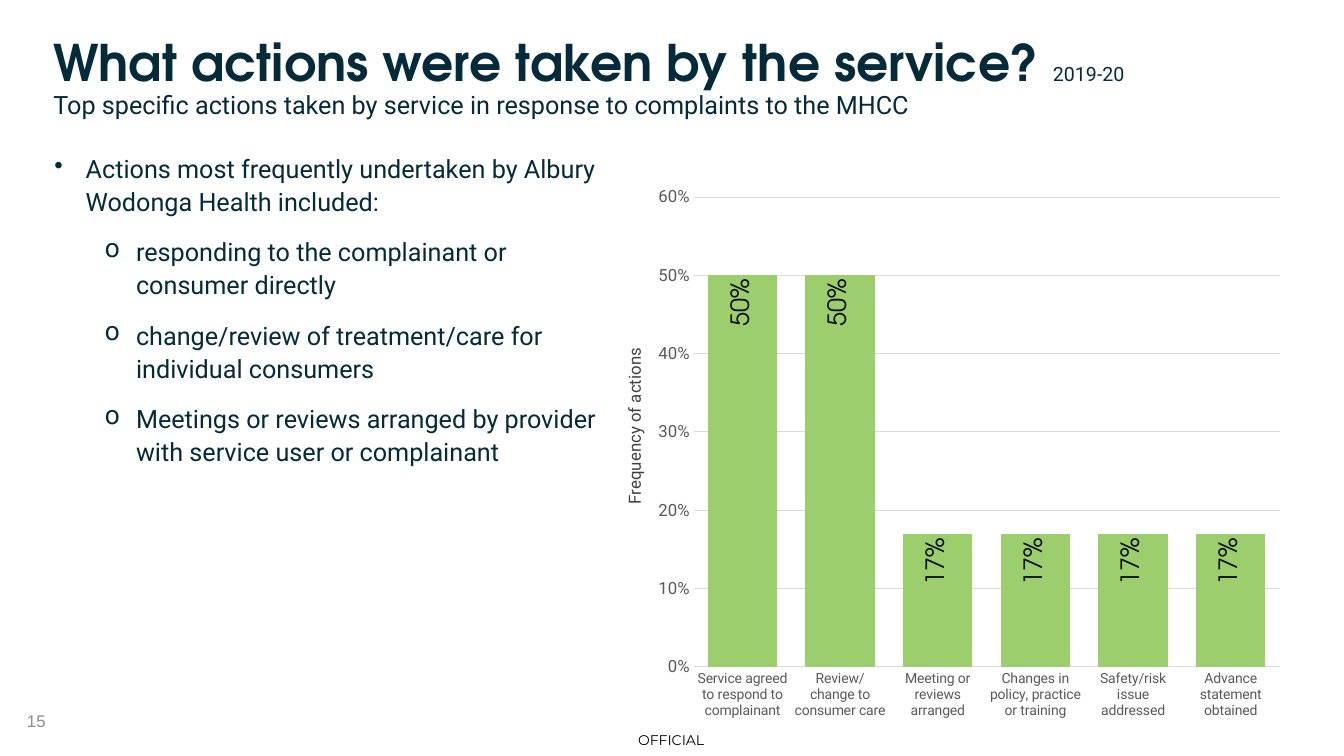
from dataclasses import dataclass

from lxml import etree
from pptx import Presentation
from pptx.chart.data import CategoryChartData
from pptx.dml.color import RGBColor
from pptx.enum import chart as charts, text as texts
from pptx.oxml import ns
from pptx.util import Cm, Pt


@dataclass(frozen=True)
class Theme:
    heading: str = "TeX Gyre Adventor"
    body: str = "Roboto"
    footer: str = "Montserrat"
    number: str = "Arial"
    navy: str = "052A39"
    green: str = "9DCE6E"
    black: str = "000000"
    label: str = "0D0D0D"
    axis_title: str = "404040"
    axis: str = "595959"
    grey: str = "8C8C8C"
    grid: str = "D9D9D9"
    title_size: int = 36
    text_size: int = 18
    year_size: int = 14
    small_size: int = 12
    tiny_size: int = 10


THEME = Theme()


@dataclass(frozen=True)
class Box:
    left: float
    top: float
    width: float
    height: float

    def lengths(self) -> tuple:
        return Cm(self.left), Cm(self.top), Cm(self.width), Cm(self.height)


@dataclass(frozen=True)
class Label:
    text: str
    box: Box
    font: str
    size: int
    color: str
    align: texts.PP_ALIGN = texts.PP_ALIGN.CENTER
    rotation: int = 0
    inset: bool = True


@dataclass(frozen=True)
class Bullet:
    text: str
    level: int = 0


LABELS = [
    Label("OFFICIAL", Box(15.62, 18.26, 2.59, 0.79), THEME.footer, THEME.tiny_size,
          THEME.black, inset=False),
    Label("15", Box(0.43, 17.65, 7.62, 1.02), THEME.number, THEME.small_size,
          THEME.grey, align=texts.PP_ALIGN.LEFT),
    Label("Frequency of actions", Box(13, 10.19, 5.97, 1.09), THEME.body,
          THEME.small_size, THEME.axis_title, rotation=270),
]

BULLETS = [
    Bullet("Actions most frequently undertaken by Albury Wodonga Health included:"),
    Bullet("responding to the complainant or consumer directly", 1),
    Bullet("change/review of treatment/care for individual consumers", 1),
    Bullet("Meetings or reviews arranged by provider with service user or complainant", 1),
]

ACTIONS = {
    "Service agreed to respond to complainant": 0.5,
    "Review/change to consumer care": 0.5,
    "Meeting or reviews arranged": 0.17,
    "Changes in policy, practice or training": 0.17,
    "Safety/risk issue addressed": 0.17,
    "Advance statement obtained": 0.17,
}


def format_font(font, *, name: str, size: int, color: str, bold: bool = False) -> None:
    font.name, font.size, font.bold = name, Pt(size), bold
    font.color.rgb = RGBColor.from_string(color)


def write(paragraph, text: str, *, name: str = THEME.body, size: int = THEME.text_size,
          color: str = THEME.navy, bold: bool = False) -> None:
    run = paragraph.add_run()
    run.text = text
    format_font(run.font, name=name, size=size, color=color, bold=bold)


def add_text_frame(slide, box: Box):
    shape = slide.shapes.add_textbox(*box.lengths())
    shape.text_frame.word_wrap = True
    return shape, shape.text_frame


def add_label(slide, label: Label) -> None:
    shape, frame = add_text_frame(slide, label.box)
    shape.rotation = label.rotation
    frame.vertical_anchor = texts.MSO_ANCHOR.MIDDLE
    if not label.inset:
        frame.margin_left = frame.margin_right = frame.margin_top = frame.margin_bottom = 0
    paragraph = frame.paragraphs[0]
    paragraph.alignment = label.align
    write(paragraph, label.text, name=label.font, size=label.size, color=label.color)


def add_title(slide) -> None:
    title = slide.shapes.title
    title.left, title.top, title.width, title.height = Box(1.09, 0.84, 31.7, 2.36).lengths()
    frame = title.text_frame
    frame.word_wrap = True
    frame.auto_size = texts.MSO_AUTO_SIZE.NONE
    frame.vertical_anchor = texts.MSO_ANCHOR.TOP
    heading, subtitle = frame.paragraphs[0], frame.add_paragraph()
    for paragraph in (heading, subtitle):
        paragraph.alignment = texts.PP_ALIGN.LEFT
        paragraph.line_spacing = 0.9
        paragraph.space_before = Pt(0)
    write(heading, "What actions were taken by the service? ", name=THEME.heading,
          size=THEME.title_size, bold=True)
    write(heading, "2019-20", size=THEME.year_size)
    write(subtitle, "Top specific actions taken by service in response to complaints to the MHCC")


def add_bullets(slide, box: Box, bullets: list[Bullet]) -> None:
    _, frame = add_text_frame(slide, box)
    for index, bullet in enumerate(bullets):
        paragraph = frame.add_paragraph() if index else frame.paragraphs[0]
        properties = paragraph._p.get_or_add_pPr()
        properties.set("marL", str(Cm(0.79 + 1.27 * bullet.level)))
        properties.set("indent", str(-Cm(0.79)))
        color = etree.SubElement(properties, ns.qn("a:buClr"))
        etree.SubElement(color, ns.qn("a:srgbClr"), val=THEME.navy)
        etree.SubElement(properties, ns.qn("a:buChar"), char="•o"[bullet.level])
        paragraph.level = bullet.level
        paragraph.line_spacing = 1.1
        paragraph.space_before = Pt(6 if index else 0)
        paragraph.space_after = Pt(6)
        write(paragraph, bullet.text)


def place_plot(chart, **fractions: float) -> None:
    plot_area = chart._chartSpace.find(".//" + ns.qn("c:plotArea"))
    for old_layout in plot_area.findall(ns.qn("c:layout")):
        plot_area.remove(old_layout)
    layout = etree.Element(ns.qn("c:layout"))
    plot_area.insert(0, layout)
    manual = etree.SubElement(layout, ns.qn("c:manualLayout"))
    settings = {"layoutTarget": "inner", "xMode": "edge", "yMode": "edge", **fractions}
    for tag, value in settings.items():
        etree.SubElement(manual, ns.qn(f"c:{tag}"), val=str(value))


def format_line(line) -> None:
    line.color.rgb = RGBColor.from_string(THEME.grid)
    line.width = Pt(0.75)


def add_actions_chart(slide, box: Box, actions: dict[str, float]) -> None:
    data = CategoryChartData(number_format="0%")
    data.categories = list(actions)
    data.add_series("Series 1", list(actions.values()))
    chart = slide.shapes.add_chart(charts.XL_CHART_TYPE.COLUMN_CLUSTERED,
                                   *box.lengths(), data).chart
    chart.has_title = chart.has_legend = False
    format_font(chart.font, name=THEME.body, size=THEME.tiny_size, color=THEME.black)
    place_plot(chart, x=0.058, y=0.183, w=0.911, h=0.725)

    # Axes
    category_axis, value_axis = chart.category_axis, chart.value_axis
    for axis, size in ((category_axis, THEME.tiny_size), (value_axis, THEME.small_size)):
        axis.major_tick_mark = axis.minor_tick_mark = charts.XL_TICK_MARK.NONE
        format_font(axis.tick_labels.font, name=THEME.body, size=size, color=THEME.axis)
    format_line(category_axis.format.line)
    value_axis.format.line.fill.background()
    format_line(value_axis.major_gridlines.format.line)
    value_axis.minimum_scale, value_axis.maximum_scale, value_axis.major_unit = 0, 0.6, 0.1
    value_axis.tick_labels.number_format = "0%"
    value_axis.tick_labels.number_format_is_linked = False

    # Columns and their upright labels
    plot = chart.plots[0]
    plot.gap_width, plot.vary_by_categories = 41, False
    series = plot.series[0]
    series.format.fill.solid()
    series.format.fill.fore_color.rgb = RGBColor.from_string(THEME.green)
    labels = series.data_labels
    labels.show_value = True
    labels.position = charts.XL_LABEL_POSITION.INSIDE_END
    labels.number_format, labels.number_format_is_linked = "0%", False
    format_font(labels.font, name=THEME.heading, size=THEME.text_size, color=THEME.label)
    body = labels._element.find(".//" + ns.qn("a:bodyPr"))
    body.set("rot", "-5400000")
    body.set("vert", "horz")


def main() -> None:
    presentation = Presentation()
    presentation.slide_width, presentation.slide_height = Cm(33.87), Cm(19.05)
    slide = presentation.slides.add_slide(presentation.slide_layouts.get_by_name("Title Only"))
    add_title(slide)
    add_bullets(slide, Box(1.12, 3.66, 14.33, 8.26), BULLETS)
    add_actions_chart(slide, Box(16.54, 1.98, 16.21, 16.33), ACTIONS)
    for label in LABELS:
        add_label(slide, label)
    presentation.save("out.pptx")


if __name__ == "__main__":
    main()
